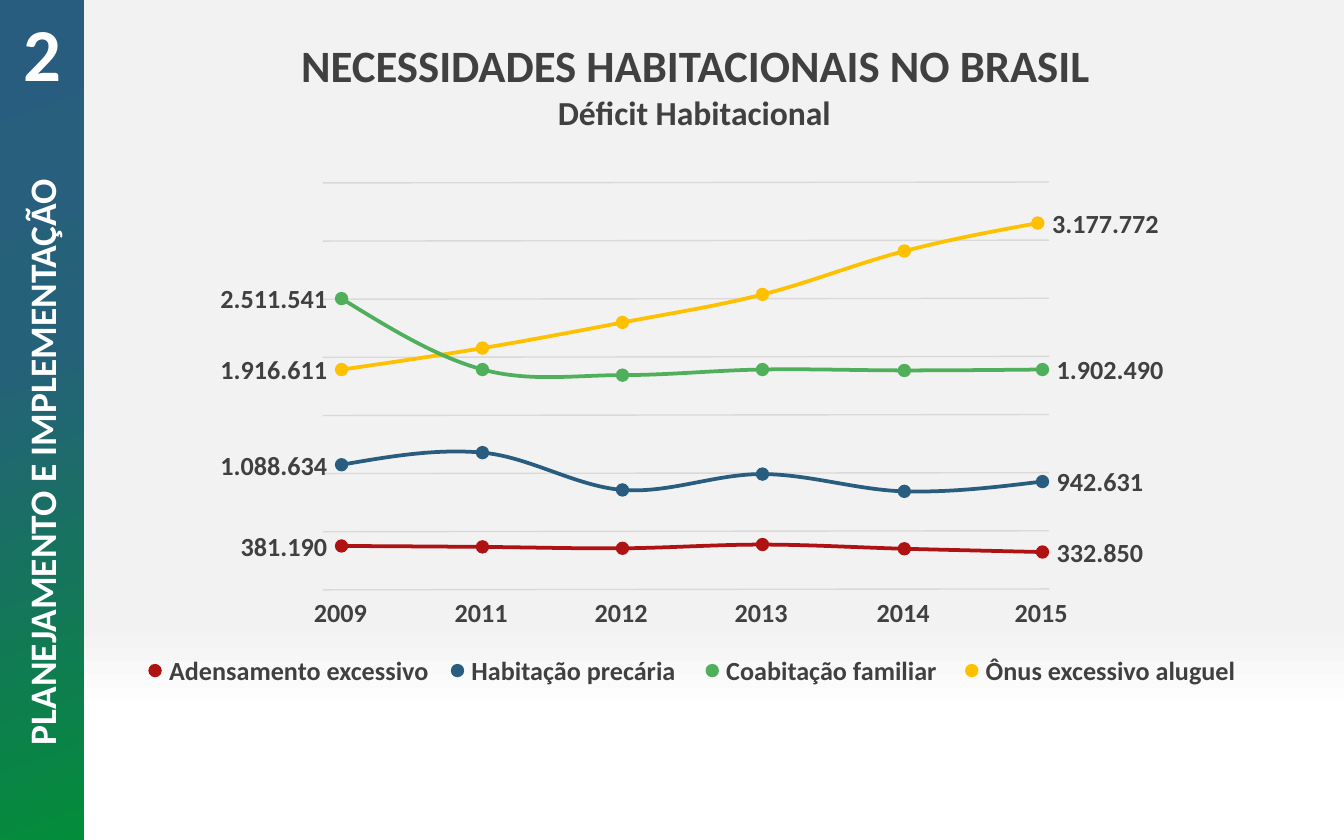
from pptx import Presentation
from pptx.dml.color import RGBColor
from pptx.enum.shapes import MSO_CONNECTOR, MSO_SHAPE
from pptx.enum.text import MSO_AUTO_SIZE, PP_ALIGN
from pptx.oxml.ns import qn
from pptx.util import Pt
from lxml import etree

WHITE = RGBColor(0xFF, 0xFF, 0xFF)
PALE = RGBColor(0xF2, 0xF2, 0xF2)
RULE = RGBColor(0xD9, 0xD9, 0xD9)
INK = RGBColor(0x40, 0x40, 0x40)
RED = RGBColor(0xAE, 0x12, 0x12)
BLUE = RGBColor(0x28, 0x5D, 0x7F)
TEAL = RGBColor(0x25, 0x61, 0x79)
LEAF = RGBColor(0x03, 0x8C, 0x3A)
GREEN = RGBColor(0x4F, 0xAF, 0x5A)
GOLD = RGBColor(0xFF, 0xC0, 0x00)

DOT = 7.2
LINE = 24.5  # height of a one-line label

YEARS = {"2009": 183, "2011": 258.5, "2012": 333.5,
         "2013": 408.5, "2014": 484.5, "2015": 558.5}

# colour, heights by year, first label, last label, x of last point
SERIES = [
    (RED, [292.5, 293, 293.75, 291.75, 294, 295.75],
     "381.190", "332.850", 558.5),
    (BLUE, [249, 242.5, 262.5, 254, 263.25, 258],
     "1.088.634", "942.631", 558.5),
    (GOLD, [198, 186.5, 172.75, 157.75, 134.5, 119.5],
     "1.916.611", "3.177.772", 556),
    (GREEN, [160, 198, 201, 198, 198.5, 198],
     "2.511.541", "1.902.490", 558.5),
]

# left, text width, colour, name
LEGEND = [
    (79.5, 155, RED, "Adensamento excessivo"),
    (241.5, 124.5, BLUE, "Habitação precária"),
    (378, 128, GREEN, "Coabitação familiar"),
    (517, 149, GOLD, "Ônus excessivo aluguel"),
]


def shade(fill, node, stops, angle):
    """Give a fill a gradient of (percent, colour) stops, angle clockwise."""
    fill.gradient()
    fill.gradient_angle = 360 - angle
    group = next(node.iter(qn("a:gsLst")))
    for old in list(group):
        group.remove(old)
    for place, color in stops:
        stop = etree.SubElement(group, qn("a:gs"), pos=str(place * 1000))
        etree.SubElement(stop, qn("a:srgbClr"), val=str(color))


def write(shapes, text, left, top, width, height=LINE, size=14, color=INK,
          align=PP_ALIGN.LEFT, wrap=False, turn=0):
    box = shapes.add_textbox(Pt(left), Pt(top), Pt(width), Pt(height))
    box.rotation = turn
    frame = box.text_frame
    frame.word_wrap = wrap
    if not wrap:
        frame.auto_size = MSO_AUTO_SIZE.SHAPE_TO_FIT_TEXT
    line = frame.paragraphs[0]
    line.alignment = align
    run = line.add_run()
    run.text = text
    run.font.name = "Calibri"
    run.font.size = Pt(size)
    run.font.bold = True
    run.font.color.rgb = color


def add_dot(shapes, x, y, color):
    """Add a round marker centred on x, y."""
    dot = shapes.add_shape(MSO_SHAPE.OVAL, Pt(x - DOT / 2), Pt(y - DOT / 2),
                           Pt(DOT), Pt(DOT))
    dot.shadow.inherit = False
    dot.fill.solid()
    dot.fill.fore_color.rgb = color
    dot.line.fill.background()


def add_rule(shapes, y):
    rule = shapes.add_connector(MSO_CONNECTOR.STRAIGHT,
                                Pt(173), Pt(y), Pt(562), Pt(y - 0.5))
    rule.line.color.rgb = RULE
    rule.line.width = Pt(0.75)
    etree.SubElement(rule._element.spPr, qn("a:effectLst"))


def bend(vals):
    """Return the two control values of each section, along one axis."""
    slopes = [(c - a) / 6 for a, c in zip(vals, vals[2:])]
    outs = [a + s for a, s in zip(vals[1:], slopes)]
    ins = [a - s for a, s in zip(vals[1:], slopes)]
    outs.insert(0, (vals[0] + ins[0]) / 2)
    ins.append((outs[-1] + vals[-1]) / 2)
    return list(zip(outs, ins))


def add_curve(shapes, knots, color):
    """Add a smooth line: straight sections are turned into Bézier ones."""
    pen = shapes.build_freeform(Pt(knots[0][0]), Pt(knots[0][1]))
    pen.add_line_segments([(Pt(x), Pt(y)) for x, y in knots[1:]], close=False)
    curve = pen.convert_to_shape()
    xs, ys = zip(*knots)
    parts = list(curve._element.iter(qn("a:lnTo")))
    for part, across, down in zip(parts, bend(xs), bend(ys)):
        part.tag = qn("a:cubicBezTo")
        for i, (x, y) in enumerate(zip(across, down)):
            spot = etree.Element(qn("a:pt"), x=str(Pt(x - min(xs))),
                                 y=str(Pt(y - min(ys))))
            part.insert(i, spot)
    curve.shadow.inherit = False
    curve.fill.background()
    curve.line.color.rgb = color
    curve.line.width = Pt(2)


def add_series(slide, color, heights, first, final, end):
    shapes = slide.shapes.add_group_shape().shapes
    knots = list(zip([*list(YEARS.values())[:-1], end], heights))
    add_curve(shapes, knots, color)
    for x, y in knots:
        add_dot(shapes, x, y, color)
    write(shapes, final, end + 0.5, heights[-1] - 12, 6 * len(final) + 19)
    width = 6 * len(first) + 19
    write(shapes, first, 182.5 - width, heights[0] - 12, width,
          align=PP_ALIGN.RIGHT)


def add_key(slide, left, width, color, name):
    shapes = slide.shapes.add_group_shape().shapes
    add_dot(shapes, left + DOT / 2, 359.25, color)
    write(shapes, name, left + 4, 347, width)


def add_side(slide):
    side = slide.shapes.add_shape(MSO_SHAPE.RECTANGLE, 0, 0, Pt(45), Pt(450))
    side.shadow.inherit = False
    side.line.fill.background()
    shade(side.fill, side._element, [(0, BLUE), (42, TEAL), (100, LEAF)], 70)


def add_heads(slide):
    """Add the side texts, the title and the subtitle."""
    heads = [
        ("PLANEJAMENTO E IMPLEMENTAÇÃO", -168.5, 232, 381, 31, 20, WHITE, 270),
        ("2", 0, 0, 45, 59, 40, WHITE, 0),
        ("NECESSIDADES HABITACIONAIS NO BRASIL",
         110, 16.5, 525, 36, 24, INK, 0),
        ("Déficit Habitacional", 109.5, 45.5, 525, 36, 18, INK, 0),
    ]
    for text, left, top, width, height, size, color, turn in heads:
        write(slide.shapes, text, left, top, width, height, size=size,
              color=color, turn=turn, align=PP_ALIGN.CENTER, wrap=True)


def main():
    deck = Presentation()
    deck.slide_width, deck.slide_height = Pt(720), Pt(450)
    slide = deck.slides.add_slide(deck.slide_layouts[6])
    shade(slide.background.fill, slide._element,
          [(0, PALE), (74, PALE), (85, WHITE), (100, WHITE)], 90)
    add_side(slide)
    add_heads(slide)
    grid = slide.shapes.add_group_shape().shapes
    for i in range(8):
        add_rule(grid, 316 - 31.14 * i)
    for year, x in YEARS.items():
        write(slide.shapes, year, x - 22, 316, 43)
    for key in LEGEND:
        add_key(slide, *key)
    for series in SERIES:
        add_series(slide, *series)
    deck.save("out.pptx")


if __name__ == "__main__":
    main()
